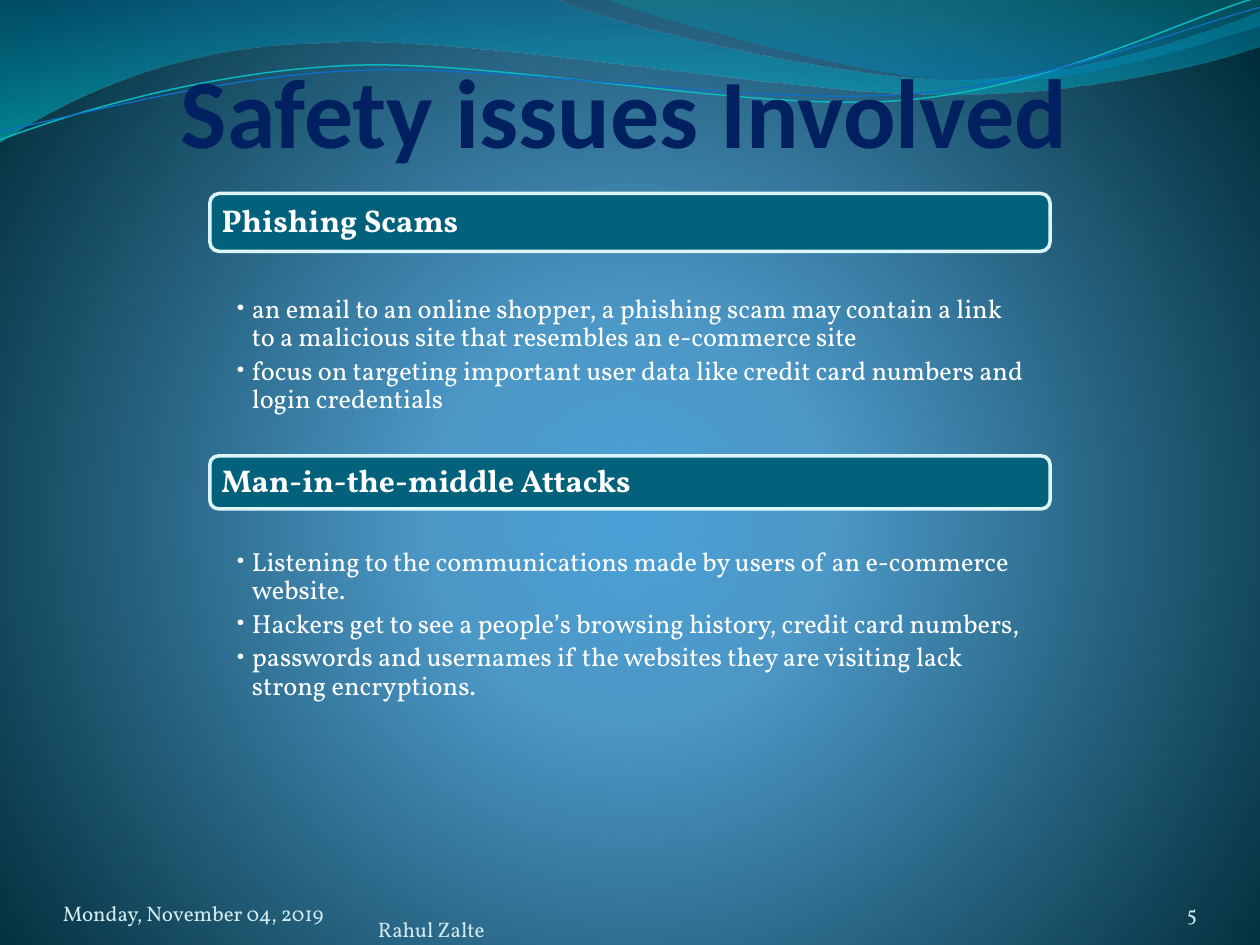
from lxml import etree
from pptx import Presentation
from pptx.dml.color import RGBColor
from pptx.enum.shapes import MSO_SHAPE
from pptx.enum.text import MSO_ANCHOR, MSO_AUTO_SIZE, PP_ALIGN
from pptx.oxml.ns import qn
from pptx.util import Cm, Pt

ROUNDED = MSO_SHAPE.ROUNDED_RECTANGLE
TOP, MIDDLE, BOTTOM = MSO_ANCHOR.TOP, MSO_ANCHOR.MIDDLE, MSO_ANCHOR.BOTTOM
LEFT, RIGHT = PP_ALIGN.LEFT, PP_ALIGN.RIGHT
TITLE_ONLY = 5
BODY_FONT, TITLE_FONT = "Vollkorn", "Calibri"
COLORS = {
    "title": "002060", "text": "FFFFFF", "footer": "D1EAEE",
    "header": "04617B", "border": "DBF5F9", "teal": "0AB8BF", "blue": "0F6FC6",
    "center": "4AA0D6", "halo": "4C98C7", "edge": "002C38",
    "band_top": "0074A1", "band_base": "00C6CF",
    "crest_top": "00A1A9", "crest_base": "008BBF",
}
BACKGROUND = [(0, "center", 100), (25, "halo", 100), (100, "edge", 100)]
BANDS = [
    ([[(0, 0)], [(11.18, -0.03)],
      [(12.09, 0.43), (16.87, 1.6), (19.25, 1.6)],
      [(21.67, 1.6), (24.33, 0.66), (25.4, 0.23)], [(25.43, 0.91)],
      [(24.97, 1.12), (22.1, 1.93), (18.95, 1.9)],
      [(15.8, 1.9), (9.7, 0.71), (6.53, 0.86)],
      [(3.28, 0.91), (1.17, 2.11), (-0.03, 2.87)]],
     [(0, "band_top", 45), (100, "band_base", 55)]),
    ([[(12.17, -0.03)],
      [(12.93, 0.28), (17.32, 1.57), (19.53, 1.65)],
      [(21.74, 1.75), (24.41, 0.81), (25.4, 0.53)], [(25.4, 0)]],
     [(0, "crest_top", 30), (80, "crest_base", 45)]),
]
STRANDS = [
    ([[(0, 2.82)], [(1.22, 2.36), (4.01, 1.45), (7.04, 1.32)],
      [(10.03, 1.19), (15.06, 2.26), (18.11, 2.03)],
      [(21.16, 1.8), (23.83, 0.38), (25.35, -0.05)]], "teal", 0.85),
    ([[(0, 2.64)], [(1.19, 2.44), (4.17, 1.55), (7.19, 1.42)],
      [(10.24, 1.3), (15.16, 2.13), (18.21, 1.9)],
      [(21.23, 1.7), (23.9, 0.53), (25.4, 0.15)]], "blue", 0.75),
]
SECTIONS = [
    ((4.23, 3.9, 16.94, 5.28), 1.17, 0.09, "Phishing Scams", [
        "an email to an online shopper, a phishing scam may contain a link to a "
        "malicious site that resembles an e-commerce site",
        "focus on targeting important user data like credit card numbers and "
        "login credentials"]),
    ((4.23, 9.19, 16.94, 5.87), 1.07, 0, "Man-in-the-middle Attacks", [
        "Listening to the communications made by users of an e-commerce website.",
        "Hackers get to see a people’s browsing history, credit card numbers,",
        "passwords and usernames if the websites they are visiting lack strong "
        "encryptions."]),
]
FOOTERS = [
    ((1.27, 17.65, 5.92, 1.02), "Monday, November 04, 2019", LEFT),
    ((7.62, 17.96, 9.32, 1.02), "Rahul Zalte", LEFT),
    ((22.02, 17.65, 2.11, 1.02), "5", RIGHT),
]


def color(name):
    """Return a palette colour."""
    return RGBColor.from_string(COLORS[name])


def set_gradient(owner, fill, stops, radial=False):
    """Fill the element with a vertical or radial gradient."""
    fill.solid()
    solid = owner.find(qn("a:solidFill"))
    gradient = etree.Element(qn("a:gradFill"), rotWithShape="1")
    stop_list = etree.SubElement(gradient, qn("a:gsLst"))
    for position, name, opacity in stops:
        stop = etree.SubElement(stop_list, qn("a:gs"), pos=str(position * 1000))
        shade = etree.SubElement(stop, qn("a:srgbClr"), val=COLORS[name])
        if opacity < 100:
            etree.SubElement(shade, qn("a:alpha"), val=str(opacity * 1000))
    if radial:
        route = etree.SubElement(gradient, qn("a:path"), {"path": "circle"})
        etree.SubElement(route, qn("a:fillToRect"),
                         l="10000", t="110000", r="10000", b="100000")
    else:
        etree.SubElement(gradient, qn("a:lin"), ang="5400000", scaled="1")
    owner.replace(solid, gradient)


def add_outline(slide, segments, close):
    """Draw a freeform whose three-point segments are cubic curves."""
    points = [(Cm(x), Cm(y)) for segment in segments for x, y in segment]
    builder = slide.shapes.build_freeform(*points[0])
    builder.add_line_segments(points[1:], close=close)
    shape = builder.convert_to_shape()
    shape.shadow.inherit = False
    lines = iter(list(shape._element.iter(qn("a:lnTo"))))
    for segment in segments[1:]:
        first = next(lines)
        if len(segment) == 3:
            curve = etree.Element(qn("a:cubicBezTo"))
            first.addprevious(curve)
            for line in (first, next(lines), next(lines)):
                curve.append(line[0])
                line.getparent().remove(line)
    return shape


def add_waves(slide):
    """Draw the translucent bands and thin strands along the top."""
    for segments, stops in BANDS:
        band = add_outline(slide, segments, True)
        set_gradient(band._element.spPr, band.fill, stops)
        band.line.fill.background()
    for segments, name, width in STRANDS:
        strand = add_outline(slide, segments, False)
        strand.fill.background()
        strand.line.color.rgb = color(name)
        strand.line.width = Pt(width)


def format_frame(frame, anchor, margins):
    """Set wrapping, anchor and margins (left, top, right, bottom)."""
    values = {"word_wrap": True, "auto_size": MSO_AUTO_SIZE.NONE,
              "vertical_anchor": anchor}
    for side, margin in zip(("left", "top", "right", "bottom"), margins):
        values[f"margin_{side}"] = Cm(margin)
    for attribute, value in values.items():
        setattr(frame, attribute, value)


def write(paragraph, text, size, name, bold=False, font=BODY_FONT, **layout):
    """Write one formatted run and set the paragraph's layout."""
    run = paragraph.add_run()
    run.text = text
    for attribute, value in {"size": Pt(size), "bold": bold, "name": font}.items():
        setattr(run.font, attribute, value)
    run.font.color.rgb = color(name)
    for attribute, value in layout.items():
        setattr(paragraph, attribute, value)


def add_title(slide, box):
    """Place the title in front of the waves."""
    title = slide.shapes.title
    title._element.getparent().append(title._element)
    for attribute, value in zip(("left", "top", "width", "height"), box):
        setattr(title, attribute, Cm(value))
    format_frame(title.text_frame, BOTTOM, (0, 0, 0.05, 0))
    write(title.text_frame.paragraphs[0], "Safety issues Involved", 56, "title",
          True, TITLE_FONT, alignment=RIGHT)


def add_section(slide, box, header_height, gap, heading, items):
    """Place a heading bar with its bulleted list below."""
    left, top, width, height = box
    bar = slide.shapes.add_shape(ROUNDED, *map(Cm, (left, top, width, header_height)))
    bar.shadow.inherit = False
    bar.fill.solid()
    bar.fill.fore_color.rgb = color("header")
    bar.line.color.rgb = color("border")
    bar.line.width = Pt(2)
    format_frame(bar.text_frame, MIDDLE, (0.18, 0.18, 0.18, 0.18))
    write(bar.text_frame.paragraphs[0], heading, 18, "text", True,
          alignment=LEFT, line_spacing=0.9)

    offset = header_height + gap
    body = slide.shapes.add_textbox(
        *map(Cm, (left, top + offset, width, height - offset)))
    frame = body.text_frame
    format_frame(frame, TOP, (0.53, 0.8, 0.48, 0.08))
    for index, item in enumerate(items):
        paragraph = frame.add_paragraph() if index else frame.paragraphs[0]
        write(paragraph, item, 15, "text", line_spacing=0.9, space_after=Pt(3))
        properties = paragraph._p.get_or_add_pPr()
        properties.set("marL", str(Cm(0.32)))
        properties.set("indent", str(-Cm(0.32)))
        etree.SubElement(properties, qn("a:buFont"), typeface=BODY_FONT)
        etree.SubElement(properties, qn("a:buChar"), char="•")


def add_footer(slide, box, text, alignment):
    """Place one footer text."""
    frame = slide.shapes.add_textbox(*map(Cm, box)).text_frame
    format_frame(frame, BOTTOM, (0, 0, 0, 0))
    write(frame.paragraphs[0], text, 12, "footer", alignment=alignment)


def main():
    """Build and save the slide."""
    presentation = Presentation()
    presentation.slide_width, presentation.slide_height = Cm(25.4), Cm(19.05)
    slide = presentation.slides.add_slide(presentation.slide_layouts[TITLE_ONLY])
    fill = slide.background.fill
    set_gradient(slide._element.find(".//" + qn("p:bgPr")), fill, BACKGROUND, True)
    add_waves(slide)
    add_title(slide, (0.84, 0.84, 20.75, 2.54))
    for section in SECTIONS:
        add_section(slide, *section)
    for footer in FOOTERS:
        add_footer(slide, *footer)
    presentation.save("out.pptx")


if __name__ == "__main__":
    main()
